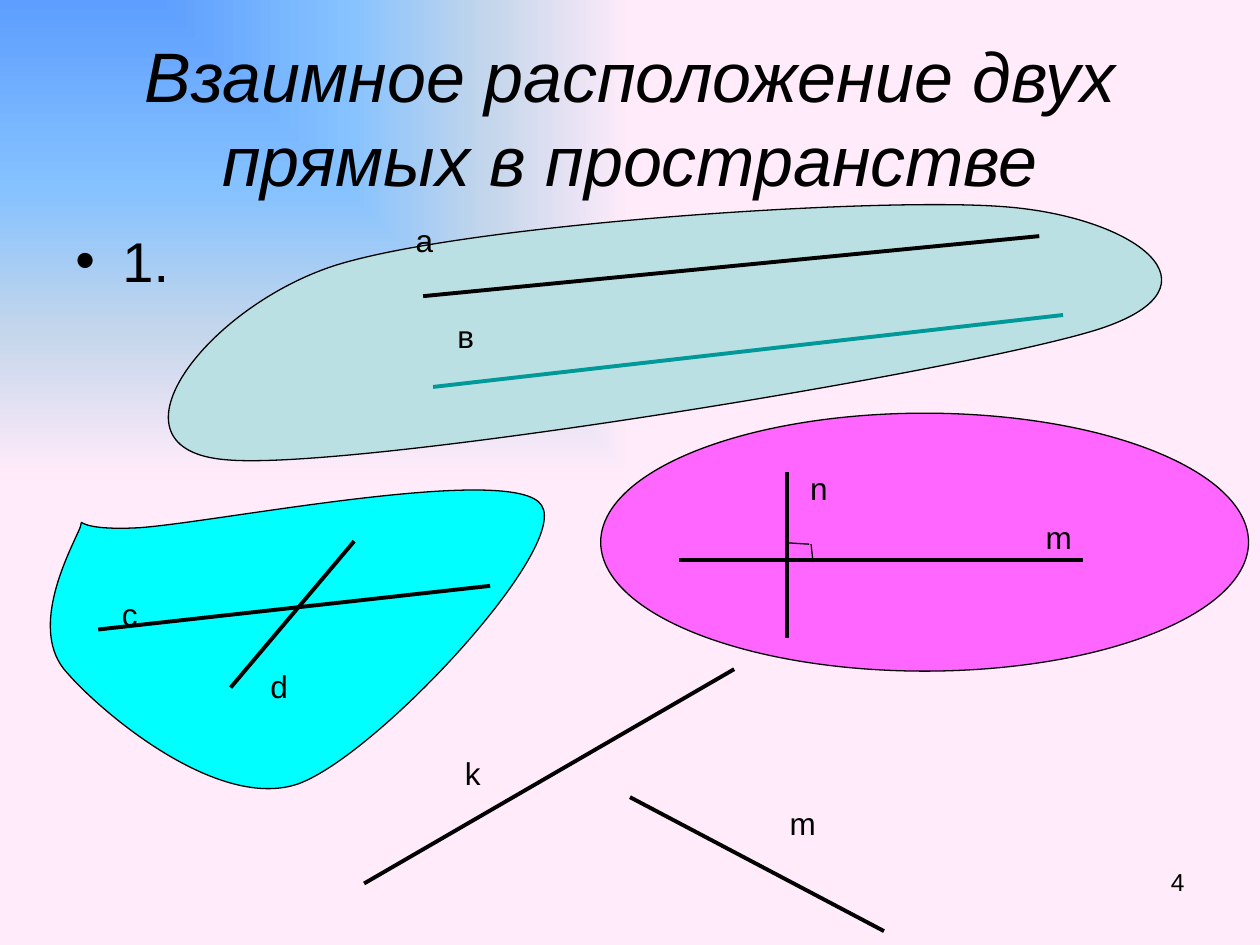
from lxml.etree import SubElement
from pptx import Presentation
from pptx.dml.color import RGBColor
from pptx.enum.shapes import MSO_CONNECTOR as Conn, MSO_SHAPE as Shape
from pptx.enum.text import MSO_ANCHOR as Anchor, PP_ALIGN as Align
from pptx.oxml import parse_xml
from pptx.oxml.ns import nsdecls, qn
from pptx.util import Cm, Pt

BLACK = RGBColor(0x00, 0x00, 0x00)
TEAL = RGBColor(0x00, 0x99, 0x99)
PALE = RGBColor(0xBB, 0xE0, 0xE3)
CYAN = RGBColor(0x00, 0xFF, 0xFF)
PINK = RGBColor(0xFF, 0x66, 0xFF)
SKY = [(0, RGBColor(0x5E, 0x9E, 0xFF)), (40, RGBColor(0x85, 0xC2, 0xFF)),
       (70, RGBColor(0xC4, 0xD6, 0xEB)), (100, RGBColor(0xFF, 0xEB, 0xFA))]
FONT = "Arial"
THICK, THIN = 2.25, 0.75

# Content, in centimetres
TITLE = "Взаимное расположение двух прямых в пространстве"
ITEM = "1."
NUMBER = "4"

OVAL = (12.11, 8.33, 13.06, 5.2)

# Planes: colour, start point, Bezier curves (two handles and an end)
PLANES = [
    (CYAN, (2.79, 10.64), [
        ((4.34, 10.54), (10.39, 9.32), (10.92, 10.19)),
        ((11.48, 11.05), (7.62, 15.21), (6.02, 15.8)),
        ((4.42, 16.36), (2.08, 14.4), (1.35, 13.56)),
        ((0.58, 12.73), (1.35, 11.23), (1.57, 10.74)),
        ((1.8, 10.29), (1.22, 10.72), (2.79, 10.64))]),
    (PALE, (6.73, 5.36), [
        ((4.11, 6.22), (1.98, 9.07), (4.57, 9.27)),
        ((7.14, 9.5), (19.56, 7.47), (22.17, 6.63)),
        ((24.79, 5.77), (22.86, 4.37), (20.27, 4.17)),
        ((17.7, 3.96), (9.35, 4.52), (6.73, 5.36))]),
]

# Lines: x1, y1, x2, y2, colour, width
LINES = [
    (8.53, 5.97, 20.95, 4.76, BLACK, THICK),
    (8.73, 7.8, 21.43, 6.35, TEAL, THICK),
    (1.98, 12.69, 9.88, 11.81, BLACK, THICK),
    (7.14, 10.91, 4.65, 13.86, BLACK, THICK),
    (7.34, 17.81, 14.8, 13.49, BLACK, THICK),
    (12.7, 16.07, 17.82, 18.77, BLACK, THICK),
    (15.87, 9.52, 15.87, 12.87, BLACK, THICK),
    (13.69, 11.29, 21.84, 11.29, BLACK, THICK),
    (15.83, 10.94, 16.31, 10.97, BLACK, THIN),
    (16.35, 10.97, 16.39, 11.33, BLACK, THIN),
]

# Labels: text, left, top, width
LABELS = [
    ("а", 8.13, 4.34, 0.86), ("в", 8.97, 6.27, 0.86),
    ("с", 2.21, 11.87, 0.84), ("d", 5.2, 13.32, 0.86),
    ("n", 16.08, 9.33, 0.86), ("m", 20.83, 10.31, 1.04),
    ("k", 9.12, 15.08, 0.84), ("m", 15.67, 16.08, 1.04),
]

deck = Presentation()
deck.slide_width, deck.slide_height = Cm(25.4), Cm(19.05)
slide = deck.slides.add_slide(deck.slide_layouts[6])
shapes = slide.shapes


def paint(shape, color):
    shape.shadow.inherit = False
    shape.fill.solid()
    shape.fill.fore_color.rgb = color
    shape.line.color.rgb = BLACK
    shape.line.width = Pt(THIN)


def blob(start, curves):
    """Closed outline: each three straight steps become one Bezier curve."""
    pen = shapes.build_freeform(*map(Cm, start))
    pen.add_line_segments([(Cm(x), Cm(y)) for c in curves for x, y in c])
    shape = pen.convert_to_shape()
    steps = list(shape._element.iter(qn("a:lnTo")))
    for i in range(0, 3 * len(curves), 3):
        curve = parse_xml(f'<a:cubicBezTo {nsdecls("a")}/>')
        steps[i].addprevious(curve)
        for step in steps[i:i + 3]:
            curve.append(step[0])
            step.getparent().remove(step)
    return shape


def write(text, box, size, wrap=True, align=Align.LEFT):
    frame = shapes.add_textbox(*map(Cm, box)).text_frame
    frame.word_wrap = wrap
    para = frame.paragraphs[0]
    para.text = text
    para.alignment = align
    para.font.name, para.font.size = FONT, Pt(size)
    para.font.color.rgb = BLACK
    return frame, para


# Background: gradient spreading from the top left corner
fill = slide.background.fill
fill.solid()
stops = "".join(f'<a:gs pos="{pos * 1000}"><a:srgbClr val="{color}"/></a:gs>'
                for pos, color in SKY)
grad = parse_xml(
    f'<a:gradFill {nsdecls("a")} rotWithShape="0"><a:gsLst>{stops}</a:gsLst>'
    '<a:path path="rect"><a:fillToRect r="100000" b="100000"/></a:path>'
    '</a:gradFill>')
solid = next(slide.element.iter(qn("a:solidFill")))
solid.getparent().replace(solid, grad)

# Slide number and planes
write(NUMBER, (18.21, 17.35, 5.92, 1.32), 14, align=Align.RIGHT)
paint(shapes.add_shape(Shape.OVAL, *map(Cm, OVAL)), PINK)
for color, start, curves in PLANES:
    paint(blob(start, curves), color)

# Title and list item
frame, para = write(TITLE, (1.27, 0.76, 22.86, 3.18), 40, align=Align.CENTER)
frame.vertical_anchor = Anchor.MIDDLE
para.font.italic = True

frame, para = write(ITEM, (1.27, 4.45, 22.86, 12.57), 32)
para.space_before = Pt(6)
props = para._p.get_or_add_pPr()
props.set("marL", str(Cm(0.95)))
props.set("indent", str(-Cm(0.95)))
for spot, (tag, key, value) in enumerate(
        [("a:buFont", "typeface", FONT), ("a:buChar", "char", "•")], 1):
    mark = SubElement(props, qn(tag))
    mark.set(key, value)
    props.insert(spot, mark)

# Lines and their labels
for x1, y1, x2, y2, color, width in LINES:
    line = shapes.add_connector(Conn.STRAIGHT, *map(Cm, (x1, y1, x2, y2)))
    line.line.color.rgb = color
    line.line.width = Pt(width)
    SubElement(line._element.spPr, qn("a:effectLst"))

for text, left, top, width in LABELS:
    write(text, (left, top, width, 1.02), 18, wrap=False)

deck.save("out.pptx")
